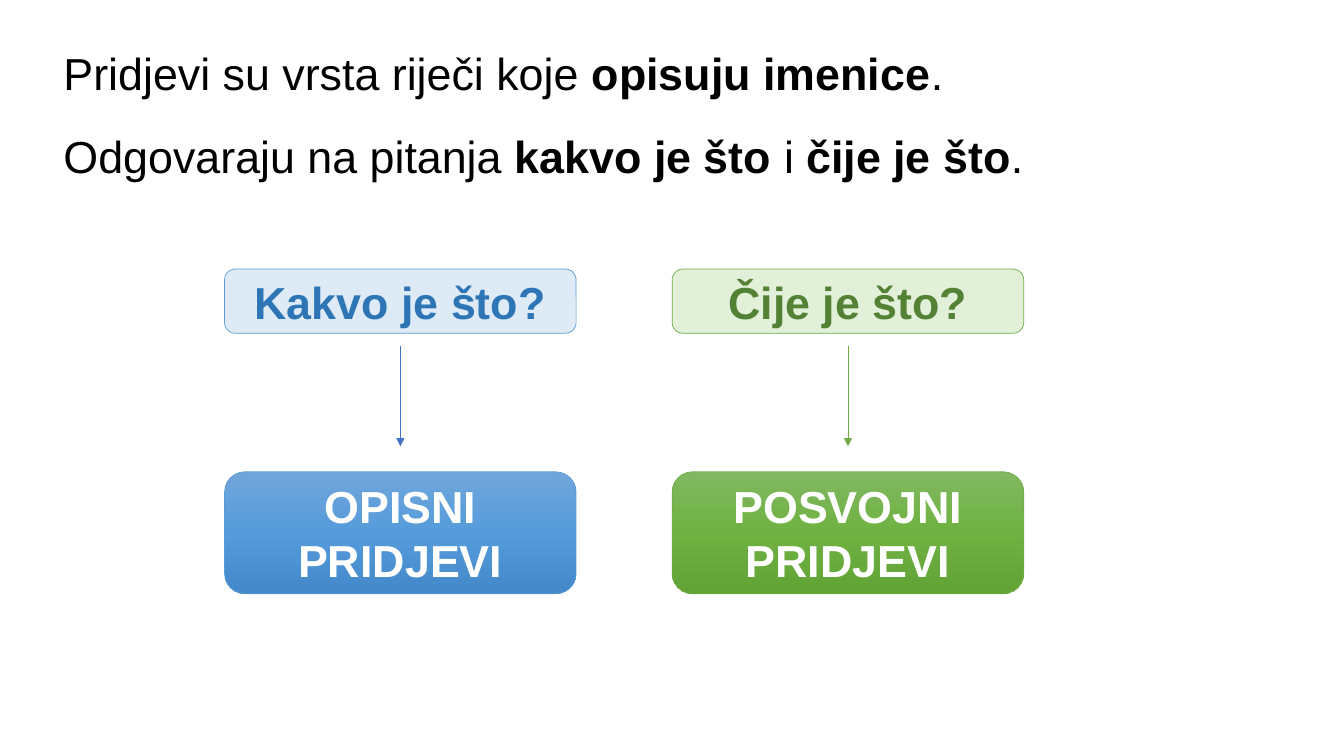
"""Build a slide on Croatian adjectives: two statements and two question-to-type columns."""
from copy import deepcopy

from lxml.etree import SubElement
from pptx import Presentation
from pptx.dml.color import RGBColor
from pptx.enum.shapes import MSO_CONNECTOR as Connector, MSO_SHAPE as Shape
from pptx.enum.text import MSO_ANCHOR as Anchor, MSO_AUTO_SIZE as AutoSize, PP_ALIGN as Align
from pptx.oxml.ns import qn
from pptx.util import Cm, Pt


def rgb(value):
    return RGBColor.from_string(value)


def add_span(para, text, color, bold):
    span = para.add_run()
    span.text = text
    span.font.name = "Arial"
    span.font.size = Pt(32)
    span.font.bold = bold
    span.font.color.rgb = rgb(color)


deck = Presentation()
deck.slide_width, deck.slide_height = Cm(33.87), Cm(19.05)
page = deck.slides.add_slide(deck.slide_layouts[6])

statements = [
    (1.04, 22.83, False, [("Pridjevi su vrsta riječi koje ", False), ("opisuju imenice", True), (".", False)]),
    (3.12, 26.75, True, [("Odgovaraju na pitanja ", False), ("kakvo je što ", True), ("i ", False),
                         ("čije je što", True), (".", False)]),
]
for top, width, wrap, spans in statements:
    box = page.shapes.add_textbox(Cm(1.35), Cm(top), Cm(width), Cm(1.62))
    box.text_frame.word_wrap = wrap
    box.text_frame.auto_size = AutoSize.SHAPE_TO_FIT_TEXT
    for text, bold in spans:
        add_span(box.text_frame.paragraphs[0], text, "000000", bold)

box_width = 8.86
columns = [
    (5.66, "Kakvo je što?", "2E75B6", "DEEBF7", "5B9BD5", "4472C4",
     "OPISNI PRIDJEVI", ["71A6DB", "559BDB", "448ACA"]),
    (16.94, "Čije je što?", "548235", "E2F0D9", "70AD47", "70AD47",
     "POSVOJNI PRIDJEVI", ["81B861", "6FB242", "62A336"]),
]
for left, question, question_color, tint, outline, arrow_color, kind, shades in columns:
    rows = [(6.78, 1.62, question, question_color, [tint]), (11.89, 3.07, kind, "FFFFFF", shades)]
    for top, height, text, text_color, fills in rows:
        box = page.shapes.add_shape(Shape.ROUNDED_RECTANGLE, Cm(left), Cm(top), Cm(box_width), Cm(height))
        box.shadow.inherit = False
        box.line.color.rgb = rgb(outline)
        box.line.width = Pt(0.5)
        if len(fills) == 1:
            box.fill.solid()
            box.fill.fore_color.rgb = rgb(fills[0])
        else:
            box.fill.gradient()
            box.fill.gradient_angle = 270
            first_stop = box._element.spPr.find(qn("a:gradFill")).find(qn("a:gsLst"))[0]
            first_stop.addnext(deepcopy(first_stop))
            for index, stop in enumerate(box.fill.gradient_stops):
                stop.position = index / 2
                stop.color.rgb = rgb(fills[index])
        frame = box.text_frame
        frame.word_wrap = True
        frame.vertical_anchor = Anchor.MIDDLE
        frame.paragraphs[0].alignment = Align.CENTER
        add_span(frame.paragraphs[0], text, text_color, True)

    middle = Cm(left + box_width / 2)
    arrow = page.shapes.add_connector(Connector.STRAIGHT, middle, Cm(8.71), middle, Cm(11.25))
    arrow.line.color.rgb = rgb(arrow_color)
    arrow.line.width = Pt(0.5)
    SubElement(arrow.line._get_or_add_ln(), qn("a:tailEnd"), type="triangle")
    SubElement(arrow._element.spPr, qn("a:effectLst"))

deck.save("out.pptx")
